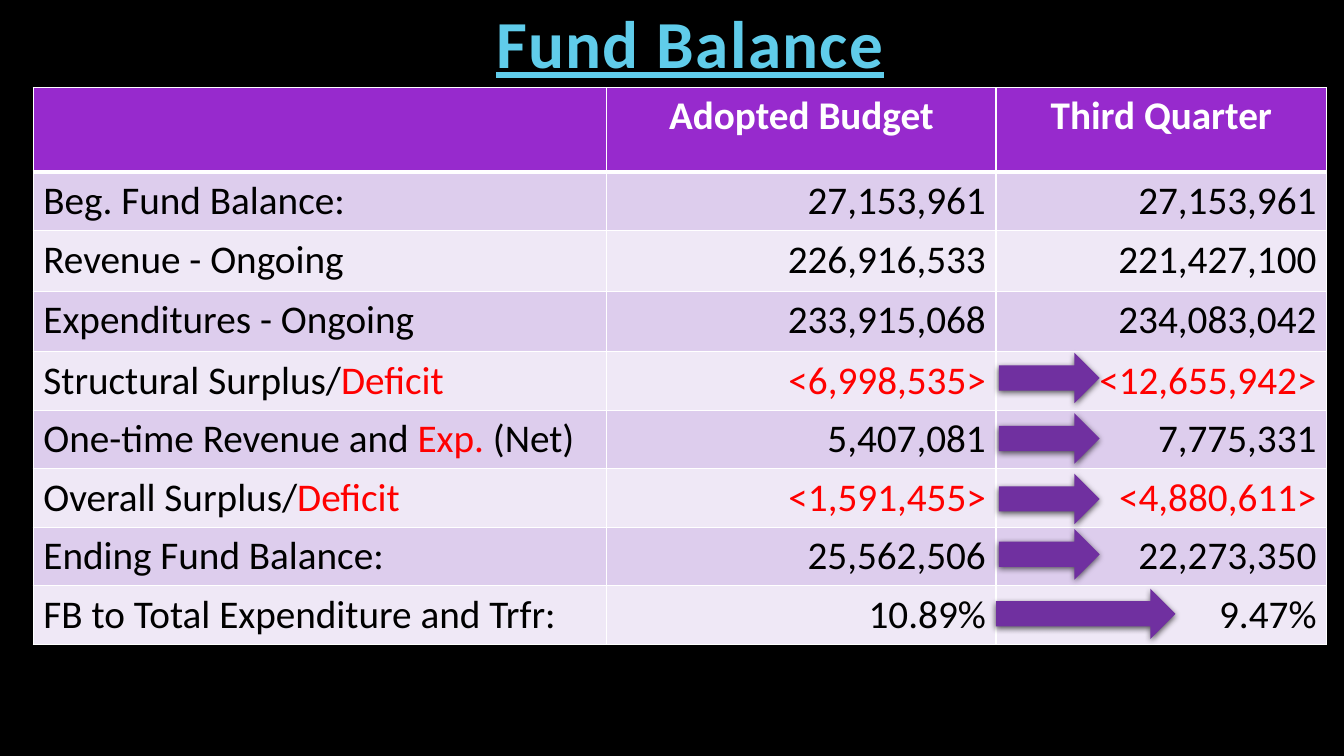
"""Build the Fund Balance slide with its budget table and arrows."""
from lxml import etree
from pptx import Presentation
from pptx.dml.color import RGBColor
from pptx.enum.shapes import MSO_SHAPE
from pptx.enum.text import MSO_ANCHOR, PP_ALIGN
from pptx.oxml import parse_xml
from pptx.oxml.ns import qn
from pptx.util import Pt

ARROW = MSO_SHAPE.RIGHT_ARROW
BOTTOM = MSO_ANCHOR.BOTTOM
LEFT, CENTER, RIGHT = PP_ALIGN.LEFT, PP_ALIGN.CENTER, PP_ALIGN.RIGHT

COL_WIDTHS = [409.7, 277.9, 236.2]
ROW_HEIGHTS = [60.5, 41.8, 43.2, 43.2] + [41.8] * 5
ROWS = [
    ("", "Adopted Budget", "Third Quarter"),
    ("Beg. Fund Balance:", "27,153,961", "27,153,961"),
    ("Revenue - Ongoing", "226,916,533", "221,427,100"),
    ("Expenditures - Ongoing", "233,915,068", "234,083,042"),
    ("Structural Surplus/|Deficit", "<6,998,535>", "<12,655,942>"),
    ("One-time Revenue and |Exp. |(Net)", "5,407,081", "7,775,331"),
    ("Overall Surplus/|Deficit", "<1,591,455>", "<4,880,611>"),
    ("Ending Fund Balance:", "25,562,506", "22,273,350"),
    ("FB to Total Expenditure and Trfr:", "10.89%", "9.47%"),
]
RED_STARTS = ("<", "Deficit", "Exp.")
ARROWS = [
    (713.5, 252, 72),
    (713.5, 295.2, 72),
    (713.5, 338.4, 72),
    (713.5, 378, 72),
    (711.4, 420.5, 128.2),
]
SHADOW = (
    '<a:effectLst xmlns:a="http://schemas.openxmlformats.org/drawingml/2006/main">'
    '<a:outerShdw blurRad="57150" dist="19050" dir="5400000" algn="ctr" rotWithShape="0">'
    '<a:srgbClr val="000000"><a:alpha val="63000"/></a:srgbClr>'
    '</a:outerShdw></a:effectLst>'
)


def rgb(value):
    return RGBColor.from_string(value)


def add_border(cell, side, width):
    ln = etree.SubElement(cell._tc.get_or_add_tcPr(), qn("a:ln" + side), w=str(Pt(width)))
    fill = etree.SubElement(ln, qn("a:solidFill"))
    etree.SubElement(fill, qn("a:srgbClr"), val="FFFFFF")


prs = Presentation()
prs.slide_width, prs.slide_height = Pt(960), Pt(540)
s = prs.slides.add_slide(prs.slide_layouts[6])
s.background.fill.solid()
s.background.fill.fore_color.rgb = rgb("000000")

table = s.shapes.add_table(len(ROWS), len(COL_WIDTHS), Pt(23.8), Pt(62.6),
                           Pt(sum(COL_WIDTHS)), Pt(sum(ROW_HEIGHTS))).table
for column, width in zip(table.columns, COL_WIDTHS):
    column.width = Pt(width)
for i, (row, height) in enumerate(zip(ROWS, ROW_HEIGHTS)):
    table.rows[i].height = Pt(height)
    header = i == 0
    band = "972ACD" if header else "DDCDED" if i % 2 else "EFE8F6"
    for j, text in enumerate(row):
        cell = table.cell(i, j)
        for side in "LRTB":
            thick = (header and side == "B") or (i == 1 and side == "T")
            add_border(cell, side, 3 if thick else 1)
        cell.fill.solid()
        cell.fill.fore_color.rgb = rgb(band)
        p = cell.text_frame.paragraphs[0]
        p.alignment = CENTER if header else RIGHT if j else LEFT
        for part in filter(None, text.split("|")):
            r = p.add_run()
            r.text = part
            r.font.name, r.font.size, r.font.bold = "Calibri", Pt(28), header
            color = "FFFFFF" if header else "FF0000" if part.startswith(RED_STARTS) else "000000"
            r.font.color.rgb = rgb(color)

title = s.shapes.add_textbox(Pt(67), Pt(20.9), Pt(851.8), Pt(41.8))
tf = title.text_frame
tf.word_wrap = True
tf.vertical_anchor = BOTTOM
tf.text = "Fund Balance"
p = tf.paragraphs[0]
p.alignment = CENTER
p.line_spacing = 0.9
r = p.runs[0]
r.font.name, r.font.size = "Calibri", Pt(48)
r.font.bold = r.font.underline = True
r.font.color.rgb = rgb("60CCEA")
r.font._element.set("spc", "100")

for left, top, width in ARROWS:
    sp = s.shapes.add_shape(ARROW, Pt(left), Pt(top), Pt(width), Pt(36))
    sp.fill.solid()
    sp.fill.fore_color.rgb = rgb("7030A0")
    sp.line.fill.background()
    sp._element.spPr.append(parse_xml(SHADOW))

prs.save("out.pptx")
